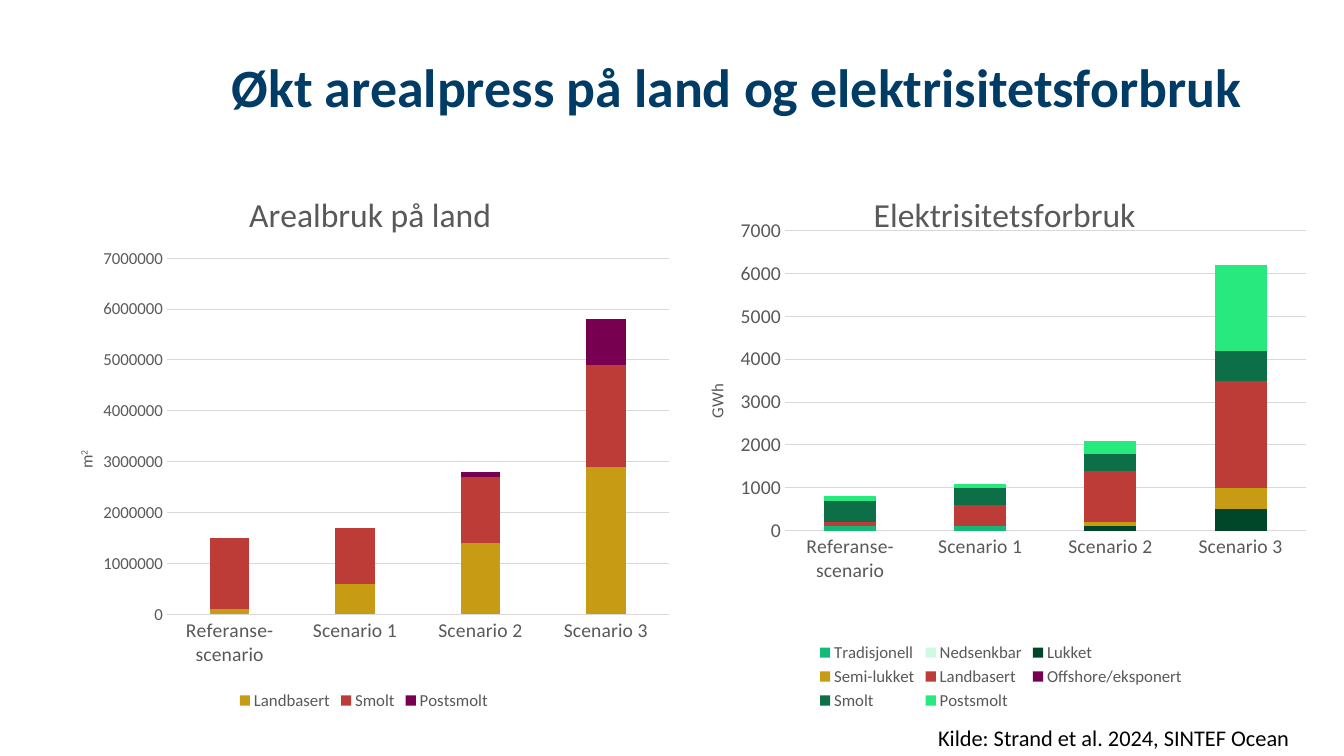
from dataclasses import dataclass

from pptx import Presentation
from pptx.chart.data import CategoryChartData
from pptx.dml.color import RGBColor
from pptx.enum.chart import XL_CHART_TYPE, XL_LEGEND_POSITION, XL_TICK_MARK
from pptx.enum.text import MSO_ANCHOR
from pptx.oxml import parse_xml
from pptx.oxml.ns import qn
from pptx.util import Pt

FONT = "Calibri"
COLORS = {
    "navy": "003C65", "black": "000000", "gray": "595959", "grid": "D9D9D9",
    "gold": "C89B14", "red": "BE3C37", "plum": "780050", "green": "14B978",
    "mint": "CDFAE1", "forest": "004628", "pine": "0C6F48", "lime": "28E97E",
}
CATEGORIES = ["Referanse-scenario", "Scenario 1", "Scenario 2", "Scenario 3"]
CHART_TOP, CHART_WIDTH, CHART_HEIGHT = 113, 453.6, 397.4
CHART_NAMESPACE = "http://schemas.openxmlformats.org/drawingml/2006/chart"


@dataclass
class Label:
    text: str
    left: float
    top: float
    width: float
    height: float
    size: float
    color: str
    bold: bool = False
    inset: tuple[float, float] = (7.2, 3.6)
    anchor: MSO_ANCHOR = MSO_ANCHOR.TOP
    line_spacing: float = 1


@dataclass
class Series:
    name: str
    values: list[int]
    color: str


@dataclass
class StackedChart:
    title: str
    title_at: tuple[float, float]
    unit: str
    exponent: str
    unit_at: tuple[float, float]
    left: float
    plot: tuple[float, float, float, float]
    gap: int
    value_size: float
    value_max: int
    value_step: int
    series: list[Series]


LABELS = [
    Label("Økt arealpress på land og elektrisitetsforbruk", 165.6, 30.2, 741, 54.7,
          38.5, "navy", True, (0, 0), MSO_ANCHOR.BOTTOM, 0.9),
    Label("Kilde: Strand et al. 2024, SINTEF Ocean", 663, 513.4, 308, 26.6, 16, "black"),
]
CHARTS = [
    StackedChart("Arealbruk på land", (0.31, 0.05), "m", "2", (0.04, 0.52), 33.1,
                 (0.19, 0.18, 0.79, 0.64), 219, 12, 7000000, 1000000, [
        Series("Landbasert", [100000, 600000, 1400000, 2900000], "gold"),
        Series("Smolt", [1400000, 1100000, 1300000, 2000000], "red"),
        Series("Postsmolt", [0, 0, 100000, 900000], "plum"),
    ]),
    StackedChart("Elektrisitetsforbruk", (0.29, 0.05), "GWh", "", (0.03, 0.4), 488.2,
                 (0.16, 0.13, 0.82, 0.54), 150, 14, 7000, 1000, [
        Series("Tradisjonell", [100, 100, 0, 0], "green"),
        Series("Nedsenkbar", [0, 0, 0, 0], "mint"),
        Series("Lukket", [0, 0, 100, 500], "forest"),
        Series("Semi-lukket", [0, 0, 100, 500], "gold"),
        Series("Landbasert", [100, 500, 1200, 2500], "red"),
        Series("Offshore/eksponert", [0, 0, 0, 0], "plum"),
        Series("Smolt", [500, 400, 400, 700], "pine"),
        Series("Postsmolt", [100, 100, 300, 2000], "lime"),
    ]),
]


def rgb(color: str) -> RGBColor:
    return RGBColor.from_string(COLORS[color])


def style_font(font, size: float, color: str, bold: bool = False) -> None:
    font.name, font.size, font.bold = FONT, Pt(size), bold
    font.color.rgb = rgb(color)


def add_run(paragraph, text: str, size: float, color: str, bold: bool = False):
    run = paragraph.add_run()
    run.text = text
    style_font(run.font, size, color, bold)
    return run


def add_label(slide, label: Label) -> None:
    shape = slide.shapes.add_textbox(
        Pt(label.left), Pt(label.top), Pt(label.width), Pt(label.height))
    frame = shape.text_frame
    frame.word_wrap = True
    frame.vertical_anchor = label.anchor
    frame.margin_left = frame.margin_right = Pt(label.inset[0])
    frame.margin_top = frame.margin_bottom = Pt(label.inset[1])
    paragraph = frame.paragraphs[0]
    paragraph.line_spacing = label.line_spacing
    add_run(paragraph, label.text, label.size, label.color, label.bold)


def place(element, index: int, position: tuple[float, ...], inner: bool = False) -> None:
    """Give a chart part a manual layout in fractions of the chart."""
    for layout in element.findall(qn("c:layout")):
        element.remove(layout)
    target = '<c:layoutTarget val="inner"/>' if inner else ""
    modes = "".join(f'<c:{axis}Mode val="edge"/>' for axis in "xy")
    sizes = "".join(f'<c:{key} val="{value}"/>' for key, value in zip("xywh", position))
    element.insert(index, parse_xml(
        f'<c:layout xmlns:c="{CHART_NAMESPACE}"><c:manualLayout>'
        f"{target}{modes}{sizes}</c:manualLayout></c:layout>"))


def add_stacked_chart(slide, spec: StackedChart) -> None:
    data = CategoryChartData(number_format="0")
    data.categories = CATEGORIES
    for series in spec.series:
        data.add_series(series.name, series.values)
    chart = slide.shapes.add_chart(
        XL_CHART_TYPE.COLUMN_STACKED, Pt(spec.left), Pt(CHART_TOP),
        Pt(CHART_WIDTH), Pt(CHART_HEIGHT), data).chart
    style_font(chart.font, 10, "black")

    # Columns
    plot = chart.plots[0]
    plot.gap_width, plot.overlap, plot.vary_by_categories = spec.gap, 100, False
    for drawn, series in zip(plot.series, spec.series):
        drawn.format.fill.solid()
        drawn.format.fill.fore_color.rgb = rgb(series.color)
    place(chart._chartSpace.chart.plotArea, 0, spec.plot, inner=True)

    # Axes
    category_axis, value_axis = chart.category_axis, chart.value_axis
    for axis, size in ((category_axis, 14), (value_axis, spec.value_size)):
        axis.major_tick_mark = axis.minor_tick_mark = XL_TICK_MARK.NONE
        style_font(axis.tick_labels.font, size, "gray")
    value_axis.minimum_scale, value_axis.maximum_scale = 0, spec.value_max
    value_axis.major_unit = spec.value_step
    value_axis.tick_labels.number_format = "0"
    value_axis.tick_labels.number_format_is_linked = False
    value_axis.format.line.fill.background()
    value_axis.has_major_gridlines = True
    for line in (category_axis.format.line, value_axis.major_gridlines.format.line):
        line.color.rgb = rgb("grid")
        line.width = Pt(0.75)

    # Titles
    paragraph = chart.chart_title.text_frame.paragraphs[0]
    add_run(paragraph, spec.title, 24, "gray")
    place(chart.chart_title._element, 1, spec.title_at)
    paragraph = value_axis.axis_title.text_frame.paragraphs[0]
    add_run(paragraph, spec.unit, 12, "gray")
    if spec.exponent:
        exponent = add_run(paragraph, spec.exponent, 12, "gray")
        exponent.font._element.set("baseline", "30000")
    place(value_axis.axis_title._element, 1, spec.unit_at)

    # Legend
    chart.has_legend = True
    chart.legend.position = XL_LEGEND_POSITION.BOTTOM
    chart.legend.include_in_layout = False
    style_font(chart.legend.font, 12, "gray")


def main() -> None:
    presentation = Presentation()
    presentation.slide_width, presentation.slide_height = Pt(960), Pt(540)
    slide = presentation.slides.add_slide(presentation.slide_layouts[6])
    for label in LABELS:
        add_label(slide, label)
    for spec in CHARTS:
        add_stacked_chart(slide, spec)
    presentation.save("out.pptx")


if __name__ == "__main__":
    main()
